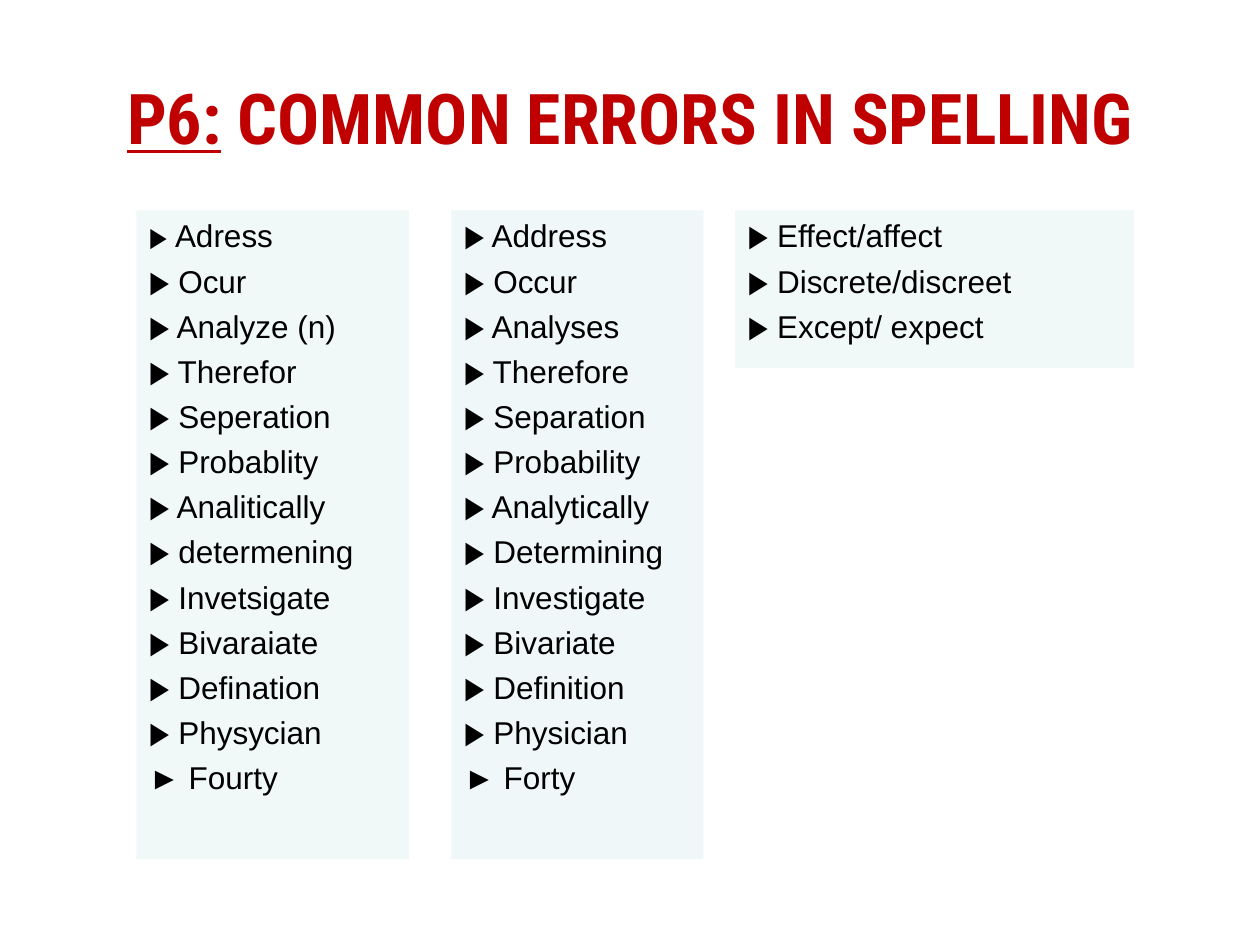
import pptx
import pptx.dml.color
import pptx.enum.shapes
import pptx.enum.text
import pptx.oxml
import pptx.oxml.ns
import pptx.util
from pptx.util import Cm

MISSPELLED = [
    "Adress", "Ocur", "Analyze (n)", "Therefor", "Seperation", "Probablity",
    "Analitically", "determening", "Invetsigate", "Bivaraiate", "Defination",
    "Physycian", "Fourty",
]
CORRECTED = [
    "Address", "Occur", "Analyses", "Therefore", "Separation", "Probability",
    "Analytically", "Determining", "Investigate", "Bivariate", "Definition",
    "Physician", "Forty",
]
CONFUSED_PAIRS = ["Effect/affect", "Discrete/discreet", "Except/ expect"]


def colour(hex_code):
    return pptx.dml.color.RGBColor.from_string(hex_code)


class SpellingSlide:
    TITLE_FONT, BODY_FONT = "Roboto Condensed", "Arial"
    TITLE_COLOUR, TEXT_COLOUR, PANEL_COLOUR = "C00000", "000000", "BBE0E3"
    TITLE_SIZE, BODY_SIZE, WORD_GAP = 40, 18, 4.2
    PANEL_TOP = 4.24

    def __init__(self, slide):
        self.slide = slide

    def add_run(self, paragraph, text, font_name, size, hex_code):
        run = paragraph.add_run()
        run.text = text
        run.font.name = font_name
        run.font.size = pptx.util.Pt(size)
        run.font.color.rgb = colour(hex_code)
        return run

    def add_title(self, label, heading):
        title = self.slide.shapes.add_textbox(Cm(1.27), Cm(0.76), Cm(22.86), Cm(3.18))
        frame = title.text_frame
        frame.word_wrap = True
        frame.vertical_anchor = pptx.enum.text.MSO_ANCHOR.MIDDLE
        paragraph = frame.paragraphs[0]
        paragraph.alignment = pptx.enum.text.PP_ALIGN.CENTER
        for text, underlined in ((label, True), (heading, False)):
            run = self.add_run(paragraph, text, self.TITLE_FONT,
                               self.TITLE_SIZE, self.TITLE_COLOUR)
            run.font.bold = True
            run.font.underline = underlined

    def add_panel(self, left, width, height, opacity):
        """Add a translucent rectangle and return its text frame."""
        panel = self.slide.shapes.add_shape(
            pptx.enum.shapes.MSO_SHAPE.RECTANGLE,
            Cm(left), Cm(self.PANEL_TOP), Cm(width), Cm(height))
        panel.shadow.inherit = False
        panel.line.fill.background()
        panel.fill.solid()
        panel.fill.fore_color.rgb = colour(self.PANEL_COLOUR)
        rgb = panel.fill._xPr.find(".//" + pptx.oxml.ns.qn("a:srgbClr"))
        rgb.append(pptx.oxml.parse_xml(
            f'<a:alpha {pptx.oxml.ns.nsdecls("a")} val="{opacity * 1000}"/>'))
        frame = panel.text_frame
        frame.word_wrap = True
        frame.vertical_anchor = pptx.enum.text.MSO_ANCHOR.TOP
        return frame

    def add_word_list(self, words, left, width, height, opacity=22,
                      last_marker="▶ ", first_marker_size=BODY_SIZE):
        frame = self.add_panel(left, width, height, opacity)
        for index, word in enumerate(words):
            first, last = index == 0, index == len(words) - 1
            paragraph = frame.paragraphs[0] if first else frame.add_paragraph()
            paragraph.alignment = pptx.enum.text.PP_ALIGN.LEFT
            if not first:
                paragraph.space_before = pptx.util.Pt(self.WORD_GAP)
            marker = last_marker if last else "▶ "
            marker_size = first_marker_size if first else self.BODY_SIZE
            if marker_size == self.BODY_SIZE:
                pieces = [(marker + word, self.BODY_SIZE)]
            else:
                pieces = [(marker, marker_size), (word, self.BODY_SIZE)]
            for text, size in pieces:
                self.add_run(paragraph, text, self.BODY_FONT, size, self.TEXT_COLOUR)


def main():
    deck = pptx.Presentation()
    deck.slide_width, deck.slide_height = Cm(25.4), Cm(19.05)
    spelling = SpellingSlide(deck.slides.add_slide(deck.slide_layouts[6]))
    spelling.add_title("P6:", " COMMON ERRORS IN SPELLING")
    spelling.add_word_list(MISSPELLED, 2.75, 5.5, 13.08,
                           last_marker="► ", first_marker_size=16)
    spelling.add_word_list(CORRECTED, 9.1, 5.08, 13.08, opacity=23, last_marker="► ")
    spelling.add_word_list(CONFUSED_PAIRS, 14.82, 8.04, 3.18)
    deck.save("out.pptx")


if __name__ == "__main__":
    main()
